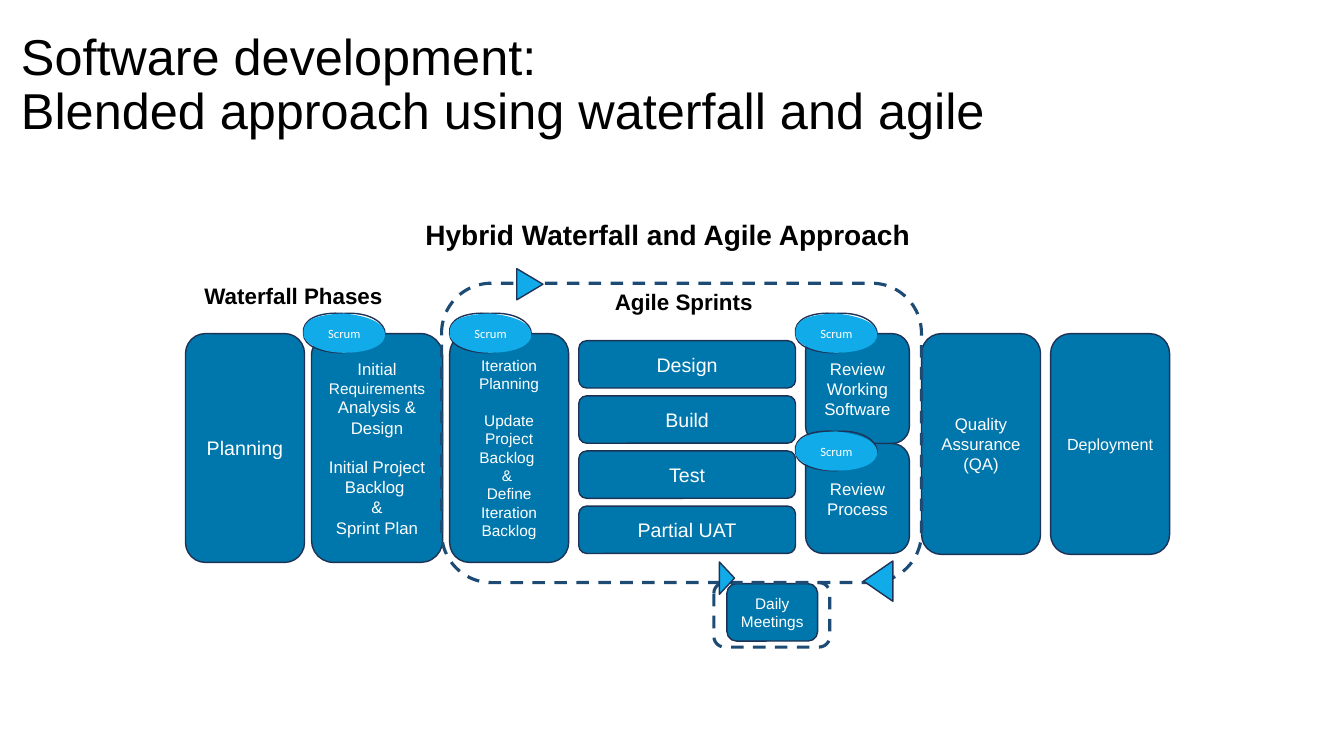
from lxml import etree
from pptx import Presentation, util as u
from pptx.dml.color import RGBColor
from pptx.enum import dml, shapes, text
from pptx.oxml import ns

BLUE = RGBColor(0x00, 0x77, 0xAC)
SKY = RGBColor(0x11, 0xAB, 0xE9)
NAVY = RGBColor(0x1E, 0x32, 0x56)
DASH = RGBColor(0x1E, 0x4B, 0x74)
WHITE = RGBColor(0xFF, 0xFF, 0xFF)
BLACK = RGBColor(0x00, 0x00, 0x00)

# Grid: square cells, 133.3 columns by 75 rows
CELL = u.Inches(0.1)
presentation = Presentation()
presentation.slide_width = int(133.3 * CELL)
presentation.slide_height = 75 * CELL
slide = presentation.slides.add_slide(presentation.slide_layouts[6])


def add_box(kind, column, row, columns, rows, fill=None, line=NAVY, weight=1):
    """Add a preset shape, or a text box when kind is None."""
    place = [int(value * CELL) for value in (column, row, columns, rows)]
    if kind is None:
        return slide.shapes.add_textbox(*place)
    shape = slide.shapes.add_shape(kind, *place)
    shape.shadow.inherit = False
    if fill is None:
        shape.fill.background()
    else:
        shape.fill.solid()
        shape.fill.fore_color.rgb = fill
    shape.line.color.rgb = line
    shape.line.width = u.Pt(weight)
    return shape


def write(shape, words, size, color=WHITE, font="Arial", bold=False,
          align=text.PP_ALIGN.CENTER, anchor=text.MSO_ANCHOR.MIDDLE):
    frame = shape.text_frame
    frame.word_wrap = True
    frame.vertical_anchor = anchor
    frame.text = words
    for paragraph in frame.paragraphs:
        paragraph.alignment = align
        for run in paragraph.runs:
            run.font.name = font
            run.font.size = u.Pt(size)
            run.font.bold = bold
            run.font.color.rgb = color
    return frame


# Title
title = write(add_box(None, 1.1, 0, 110.3, 17.1),
              "Software development: \vBlended approach using waterfall and agile",
              36, BLACK, align=text.PP_ALIGN.LEFT)
title.paragraphs[0].line_spacing = 0.9

# Phases, sprint steps and reviews
ROUND = shapes.MSO_SHAPE.ROUNDED_RECTANGLE
TOP = 33.1
ANALYSIS = "Initial \nInitial Project Backlog \n&\nSprint Plan"
ITERATION = "Iteration Planning\nUpdate Project Backlog \n& \nDefine Iteration Backlog"
boxes = [
    ("Planning", 18.4, TOP, 11.8, 22.7, 14),
    (ANALYSIS, 30.9, TOP, 13, 22.7, 12),
    (ITERATION, 44.6, TOP, 11.8, 22.7, 11),
    ("Quality Assurance (QA)", 91.4, TOP, 11.8, 21.9, 12),
    ("Deployment", 104.2, TOP, 11.8, 21.9, 11.5),
    ("Review Working Software", 79.9, TOP, 10.3, 10.9, 12),
    ("Review Process", 79.9, TOP + 10.9, 10.3, 10.9, 12),
]
for index, step in enumerate(["Design", "Build", "Test", "Partial UAT"]):
    boxes.append((step, 57.4, 33.8 + index * 5.47, 21.5, 4.7, 14))
boxes.append(("Daily Meetings", 72.1, 57.9, 9, 5.7, 11))

for words, column, row, columns, rows, size in boxes:
    frame = write(add_box(ROUND, column, row, columns, rows, BLUE), words, size)
    if len(frame.paragraphs) > 1:
        # One line of space between the two parts
        frame.paragraphs[1].space_before = u.Pt(size * 1.15)
    if words == ANALYSIS:
        for part, part_size in [("Requirements ", 11), ("Analysis & Design", 12)]:
            run = frame.paragraphs[0].add_run()
            run.text = part
            run.font.name = "Arial"
            run.font.size = u.Pt(part_size)
            run.font.color.rgb = WHITE

# Headings
for words, column, row, columns, rows, size in [
    ("Hybrid Waterfall and Agile Approach", 41.2, 21.1, 54.1, 4.4, 20),
    ("Waterfall Phases", 19.3, 27.5, 23.6, 3.7, 16),
    ("Agile Sprints", 60, 28.1, 16.3, 3.7, 16),
]:
    write(add_box(None, column, row, columns, rows), words, size, BLACK, bold=True,
          align=text.PP_ALIGN.LEFT, anchor=text.MSO_ANCHOR.TOP)

# Dashed loops around the sprint and the daily meetings
for place in [(43.8, 28.1, 47.6, 29.7), (70.8, 57.8, 11.5, 6.4)]:
    loop = add_box(ROUND, *place, line=DASH, weight=2.25)
    loop.line.dash_style = dml.MSO_LINE.DASH

# Direction marks on the loops
for column, row, columns, rows, angle in [
    (51, 26.9, 3.1, 2.6, 90),
    (85.1, 56.2, 4, 2.9, 270),
    (70.5, 56.6, 3.2, 1.5, 90),
]:
    mark = add_box(shapes.MSO_SHAPE.ISOSCELES_TRIANGLE, column, row, columns, rows, SKY)
    mark.rotation = angle

# Scrum badges: a loose outline behind a plain oval, in tenths of a cell
BADGE = (81, 39)
OUTLINE = [(-2, 6), (15, -2), (40, 0), (65, -2), (81, 9), (81, 20),
           (79, 31), (64, 35), (40, 39), (19, 39), (0, 33), (0, 20)]
OVAL = [(-1, 6), (13, 1), (40, 0), (61, 2), (80, 8), (81, 20),
        (82, 32), (64, 39), (40, 39), (17, 39), (-1, 29), (0, 20)]
for column, row in [(30.1, 31.1), (44.6, 31.1), (78.9, 31.1), (78.9, 42.8)]:
    builder = slide.shapes.build_freeform(0, 0, scale=CELL / 10)
    builder.add_line_segments([(BADGE[0], 0), BADGE, (0, BADGE[1])])
    badge = builder.convert_to_shape(int(column * CELL), int(row * CELL))
    badge.shadow.inherit = False
    badge.fill.solid()
    badge.fill.fore_color.rgb = SKY
    badge.line.color.rgb = NAVY
    badge.line.width = u.Pt(1)
    paths = next(badge.element.iter(ns.qn("a:pathLst")))
    paths.clear()
    for points, option, value in [(OUTLINE, "fill", "none"), (OVAL, "stroke", "0")]:
        curve = etree.SubElement(paths, ns.qn("a:path"), w=str(BADGE[0]), h=str(BADGE[1]))
        curve.set(option, value)
        start = etree.SubElement(curve, ns.qn("a:moveTo"))
        etree.SubElement(start, ns.qn("a:pt"), x="0", y="20")
        for first in range(0, len(points), 3):
            bend = etree.SubElement(curve, ns.qn("a:cubicBezTo"))
            for x, y in points[first:first + 3]:
                etree.SubElement(bend, ns.qn("a:pt"), x=str(x), y=str(y))
        etree.SubElement(curve, ns.qn("a:close"))
    write(badge, "Scrum", 9, font="Calibri")

presentation.save("out.pptx")
